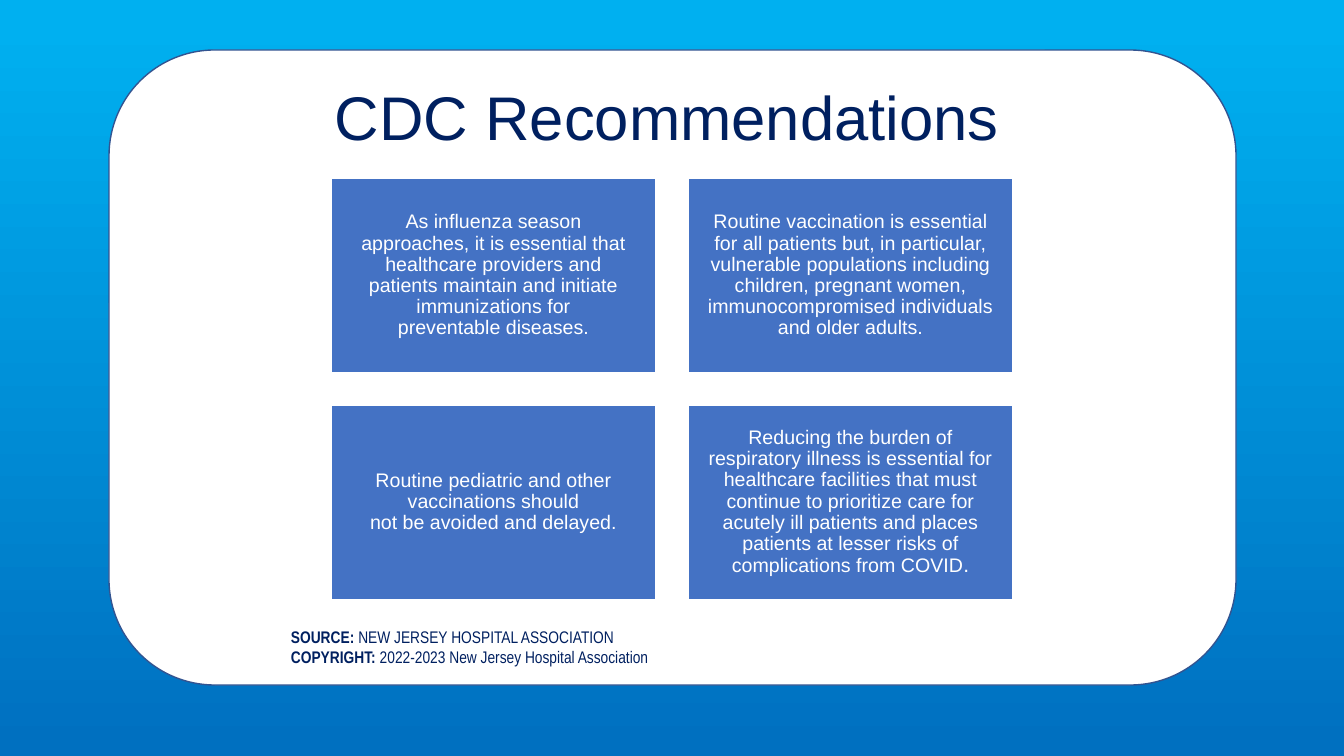
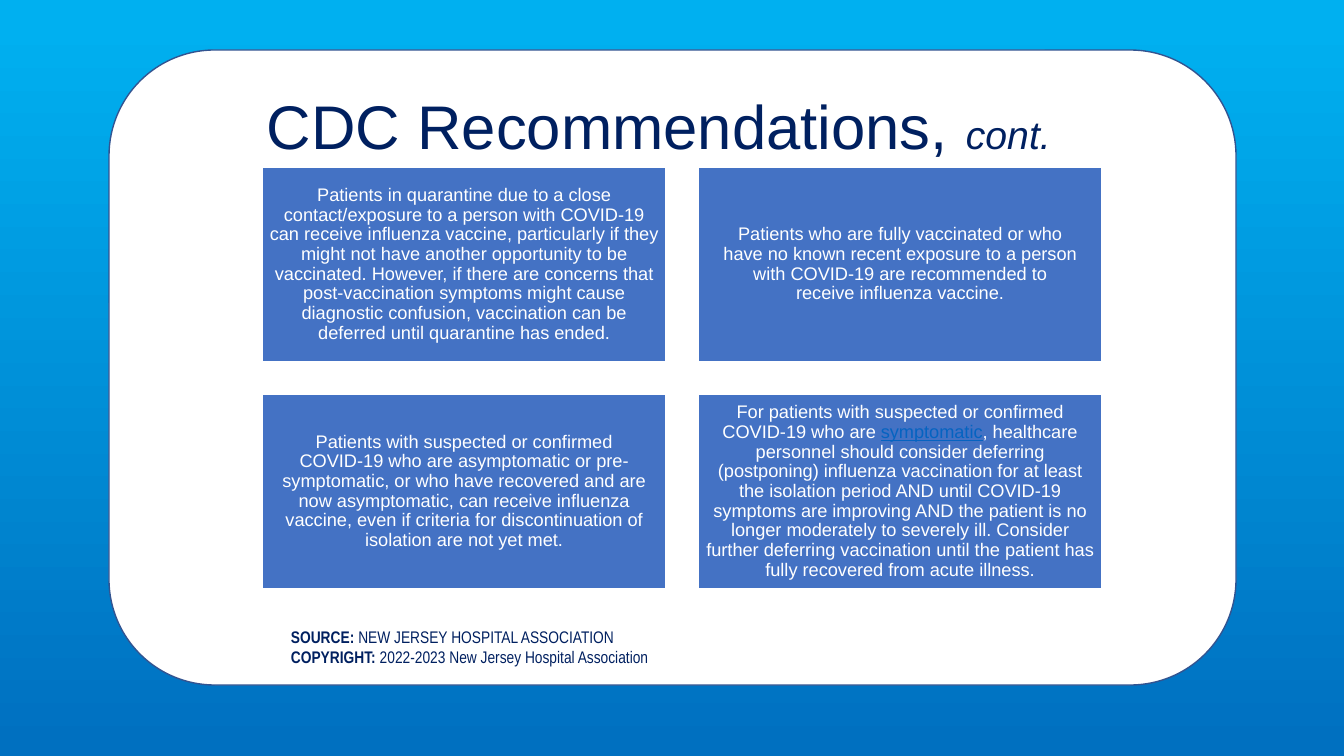
from pptx import Presentation
from pptx.dml.color import RGBColor
from pptx.enum.shapes import MSO_SHAPE
from pptx.enum.text import MSO_ANCHOR, PP_ALIGN
from pptx.util import Pt

ROUND, RECT = MSO_SHAPE.ROUNDED_RECTANGLE, MSO_SHAPE.RECTANGLE
MIDDLE, CENTER = MSO_ANCHOR.MIDDLE, PP_ALIGN.CENTER
SCALE = 914400 / 100.8
COLORS = {
    "top": "00B0F0", "base": "0070C0", "white": "FFFFFF", "edge": "325491",
    "navy": "002060", "cell": "4472C4", "link": "0563C1",
}
PANEL = (109, 50, 1127, 635)
FOOTER = (281, 622, 468, 50)
GAP = 32

CREDITS = [
    ("SOURCE: ", "NEW JERSEY HOSPITAL ASSOCIATION"),
    ("COPYRIGHT: ", "2022-2023 New Jersey Hospital Association"),
]

PAGES = [
    {
        "title": [("CDC Recommendations", {})],
        "head": (325, 82, 695, 74),
        "grid": (331, 178, 683, 422),
        "size": 14,
        "inset": 6,
        "cells": [
            [("As influenza season\napproaches, it is essential that healthcare "
              "providers and\npatients maintain and initiate immunizations for\n"
              "preventable diseases.", {})],
            [("Routine vaccination is essential\nfor all patients but, in particular, "
              "vulnerable populations including children, pregnant women, "
              "immunocompromised individuals and older adults.", {})],
            [("Routine pediatric and other\nvaccinations should\n"
              "not be avoided and delayed.", {})],
            [("Reducing the burden of\nrespiratory illness is essential for healthcare "
              "facilities that must continue to prioritize care for acutely ill patients "
              "and places patients at lesser risks of complications from COVID", {}),
             (".", {"size": 15})],
        ],
    },
    {
        "title": [("CDC Recommendations, ", {}), ("cont.", {"size": 28, "italic": True})],
        "head": (257, 91, 850, 74),
        "grid": (262, 167, 840, 422),
        "size": 13,
        "inset": 5,
        "cells": [
            [("Patients in quarantine due to a close contact/exposure to a person with "
              "COVID-19 can receive influenza vaccine, particularly if they might not have "
              "another opportunity to be vaccinated. However, if there are concerns that "
              "post-vaccination symptoms might cause diagnostic confusion, vaccination can "
              "be deferred until quarantine has ended.", {})],
            [("Patients who are fully vaccinated or who\nhave no known recent exposure to "
              "a person\nwith COVID-19 are recommended to\nreceive influenza vaccine.", {})],
            [("Patients with suspected or confirmed\nCOVID-19 who are asymptomatic or "
              "pre-symptomatic, or who have recovered and are now asymptomatic, can receive "
              "influenza vaccine, even if criteria for discontinuation of isolation are not "
              "yet met.", {})],
            [("For patients with suspected or confirmed COVID-19 who are ", {}),
             ("symptomatic", {"color": "link", "underline": True}),
             (", healthcare personnel should consider deferring (postponing) influenza "
              "vaccination for at least the isolation period AND until COVID-19 symptoms are "
              "improving AND the patient is no longer moderately to severely ill. Consider "
              "further deferring vaccination until the patient has fully recovered from "
              "acute illness.", {})],
        ],
    },
]


def px(num):
    return round(num * SCALE)


def rgb(name):
    return RGBColor.from_string(COLORS[name])


def style(font, size=None, color=None, name=None, **flags):
    if size:
        font.size = Pt(size)
    if color:
        font.color.rgb = rgb(color)
    if name:
        font.name = name
    for flag, value in flags.items():
        setattr(font, flag, value)


def write(para, parts, **base):
    style(para.font, **base)
    for text, extra in parts:
        for row, line in enumerate(text.split("\n")):
            if row:
                para.add_line_break()
            run = para.add_run()
            run.text = line
            style(run.font, **extra)


def add_box(slide, kind, box, fill, line):
    shape = slide.shapes.add_shape(kind, *map(px, box))
    shape.shadow.inherit = False
    shape.fill.solid()
    shape.fill.fore_color.rgb = rgb(fill)
    shape.line.color.rgb = rgb(line)
    shape.line.width = Pt(1)
    return shape


def add_text(slide, box):
    frame = slide.shapes.add_textbox(*map(px, box)).text_frame
    frame.word_wrap = True
    return frame


def add_base(slide):
    fill = slide.background.fill
    fill.gradient()
    fill.gradient_angle = 270
    for stop, spot, name in zip(fill.gradient_stops, (0.03, 0.99), ("top", "base")):
        stop.position = spot
        stop.color.rgb = rgb(name)
    add_box(slide, ROUND, PANEL, "white", "edge")


def add_footer(slide, box):
    frame = add_text(slide, box)
    for row, (label, text) in enumerate(CREDITS):
        para = frame.add_paragraph() if row else frame.paragraphs[0]
        write(para, [(label, {"bold": True}), (text, {})],
              size=12, color="navy", name="Arial Narrow")


def add_title(slide, box, parts):
    para = add_text(slide, box).paragraphs[0]
    para.line_spacing = 0.9
    write(para, parts, size=44, color="navy", name="Arial")


def add_grid(slide, box, cells, size, inset):
    left, top, width, height = box
    wide, high = (width - GAP) // 2, (height - GAP) // 2
    for spot, parts in enumerate(cells):
        row, col = divmod(spot, 2)
        place = (left + col * (wide + GAP), top + row * (high + GAP), wide, high)
        frame = add_box(slide, RECT, place, "cell", "white").text_frame
        frame.word_wrap = True
        frame.vertical_anchor = MIDDLE
        frame.margin_left = frame.margin_right = px(inset)
        frame.margin_top = frame.margin_bottom = px(inset)
        para = frame.paragraphs[0]
        para.alignment = CENTER
        para.line_spacing = 0.9
        write(para, parts, size=size, color="white", name="Arial")


def add_page(deck, page):
    slide = deck.slides.add_slide(deck.slide_layouts[6])
    add_base(slide)
    add_footer(slide, FOOTER)
    add_title(slide, page["head"], page["title"])
    add_grid(slide, page["grid"], page["cells"], page["size"], page["inset"])


def main():
    deck = Presentation()
    deck.slide_width, deck.slide_height = px(1344), px(756)
    for page in PAGES:
        add_page(deck, page)
    deck.save("out.pptx")


if __name__ == "__main__":
    main()
